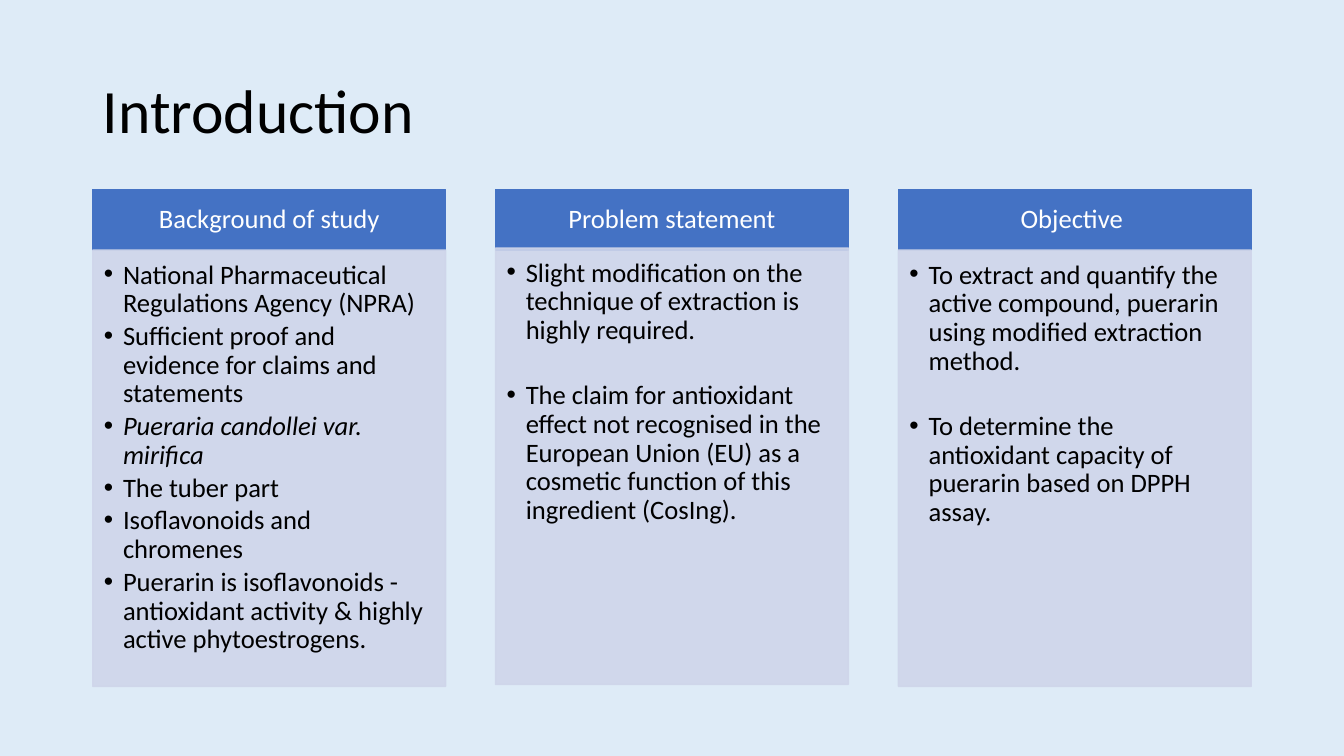
from dataclasses import dataclass

from lxml import etree
from pptx import Presentation
from pptx.dml.color import RGBColor
from pptx.enum.shapes import MSO_SHAPE
from pptx.enum.text import MSO_ANCHOR, MSO_AUTO_SIZE, PP_ALIGN
from pptx.oxml.ns import qn
from pptx.util import Inches, Pt

RECT = MSO_SHAPE.RECTANGLE
TOP, MIDDLE = MSO_ANCHOR.TOP, MSO_ANCHOR.MIDDLE
LEFT, CENTER = PP_ALIGN.LEFT, PP_ALIGN.CENTER
FIXED = MSO_AUTO_SIZE.NONE


@dataclass(frozen=True)
class Theme:
    font: str = "Calibri"
    back: str = "DEEBF7"
    head: str = "4472C4"
    panel: str = "CFD5EA"
    dark: str = "000000"
    light: str = "FFFFFF"
    big: int = 44
    small: int = 19
    tight: float = 2.85
    loose: float = 26


class Deck:
    """Draw a titled slide of headed list columns on a shared grid."""

    wide, high = 13.33, 7.5
    edge, span, width, count = 0.92, 11.49, 3.5, 3
    top, bar, depth = 1.88, 0.6, 4.33

    def __init__(self, theme):
        self.theme = theme
        self.file = Presentation()
        self.file.slide_width = Inches(self.wide)
        self.file.slide_height = Inches(self.high)
        self.slide = self.file.slides.add_slide(self.file.slide_layouts[4])
        self.paint(self.slide.background.fill, theme.back)

    def paint(self, fill, color):
        fill.solid()
        fill.fore_color.rgb = RGBColor.from_string(color)

    def box(self, shape, color):
        self.paint(shape.fill, color)
        self.paint(shape.line.fill, color)
        shape.line.width = Pt(1)

    def place(self, shape, left, top, width, height):
        shape.left, shape.top = Inches(left), Inches(top)
        shape.width, shape.height = Inches(width), Inches(height)

    def column(self, col):
        gap = (self.span - self.count * self.width) / (self.count - 1)
        return self.edge + col * (self.width + gap)

    def frame(self, shape, anchor, inset):
        text = shape.text_frame
        text.word_wrap = True
        text.auto_size = FIXED
        text.vertical_anchor = anchor
        text.margin_left, text.margin_top, text.margin_right, text.margin_bottom = map(Inches, inset)
        return text

    def say(self, para, words, size, color, align=LEFT, after=0, slant=False):
        para.alignment = align
        para.line_spacing = 0.9
        para.space_before, para.space_after = Pt(0), Pt(after)
        run = para.add_run()
        run.text = words
        font = run.font
        font.name, font.size = self.theme.font, Pt(size)
        font.bold, font.italic = False, slant
        font.color.rgb = RGBColor.from_string(color)

    def title(self, words):
        shape = self.slide.shapes.title
        self.place(shape, self.edge, 0.4, 11.5, 1.45)
        text = self.frame(shape, MIDDLE, (0.1, 0.05, 0.1, 0.05))
        self.say(text.paragraphs[0], words, self.theme.big, self.theme.dark)

    def header(self, col, words):
        spot = (self.column(col), self.top, self.width, self.bar)
        shape = self.slide.shapes.add_shape(RECT, *map(Inches, spot))
        shape.shadow.inherit = False
        self.box(shape, self.theme.head)
        text = self.frame(shape, MIDDLE, (0.15, 0.08, 0.15, 0.08))
        self.say(text.paragraphs[0], words, self.theme.small, self.theme.light, CENTER)

    def bullet(self, para):
        props = para._p.get_or_add_pPr()
        props.set("marL", str(Inches(0.19)))
        props.set("indent", str(-Inches(0.19)))
        etree.SubElement(props, qn("a:buFont")).set("typeface", "Arial")
        etree.SubElement(props, qn("a:buChar")).set("char", "•")

    def panel(self, col, slot, items, lift, after):
        shape = self.slide.placeholders[slot]
        self.slide.shapes._spTree.append(shape._element)
        self.place(shape, self.column(col), self.top + self.bar - lift, self.width, self.depth)
        self.box(shape, self.theme.panel)
        for tint in shape._element.spPr.iter(qn("a:srgbClr")):
            etree.SubElement(tint, qn("a:alpha")).set("val", "90000")
        text = self.frame(shape, TOP, (0.11, 0.11, 0.15, 0.17))
        for num, (words, slant) in enumerate(items):
            para = text.add_paragraph() if num else text.paragraphs[0]
            self.say(para, words, self.theme.small, self.theme.dark, after=after, slant=slant)
            self.bullet(para)

    def save(self):
        for shape in list(self.slide.placeholders):
            if not shape.text_frame.text:
                shape._element.getparent().remove(shape._element)
        self.file.save("out.pptx")


def main():
    theme = Theme()
    deck = Deck(theme)
    deck.title("Introduction")
    topics = [
        ("Background of study", 1, 0, theme.tight, [
            ("National Pharmaceutical Regulations Agency (NPRA)", False),
            ("Sufficient proof and evidence for claims and statements", False),
            ("Pueraria candollei var. mirifica", True),
            ("The tuber part", False),
            ("Isoflavonoids and chromenes", False),
            ("Puerarin is isoflavonoids - antioxidant activity & highly active phytoestrogens.", False),
        ]),
        ("Problem statement", 2, 0.02, theme.loose, [
            ("Slight modification on the technique of extraction is highly required.", False),
            ("The claim for antioxidant effect not recognised in the European Union (EU) "
             "as a cosmetic function of this ingredient (CosIng).", False),
        ]),
        ("Objective ", 4, 0, theme.loose, [
            ("To extract and quantify the active compound, puerarin using modified extraction method.", False),
            ("To determine the antioxidant capacity of puerarin based on DPPH assay.", False),
        ]),
    ]
    for col, (name, slot, lift, after, items) in enumerate(topics):
        deck.header(col, name)
        deck.panel(col, slot, items, lift, after)
    deck.save()


if __name__ == "__main__":
    main()
